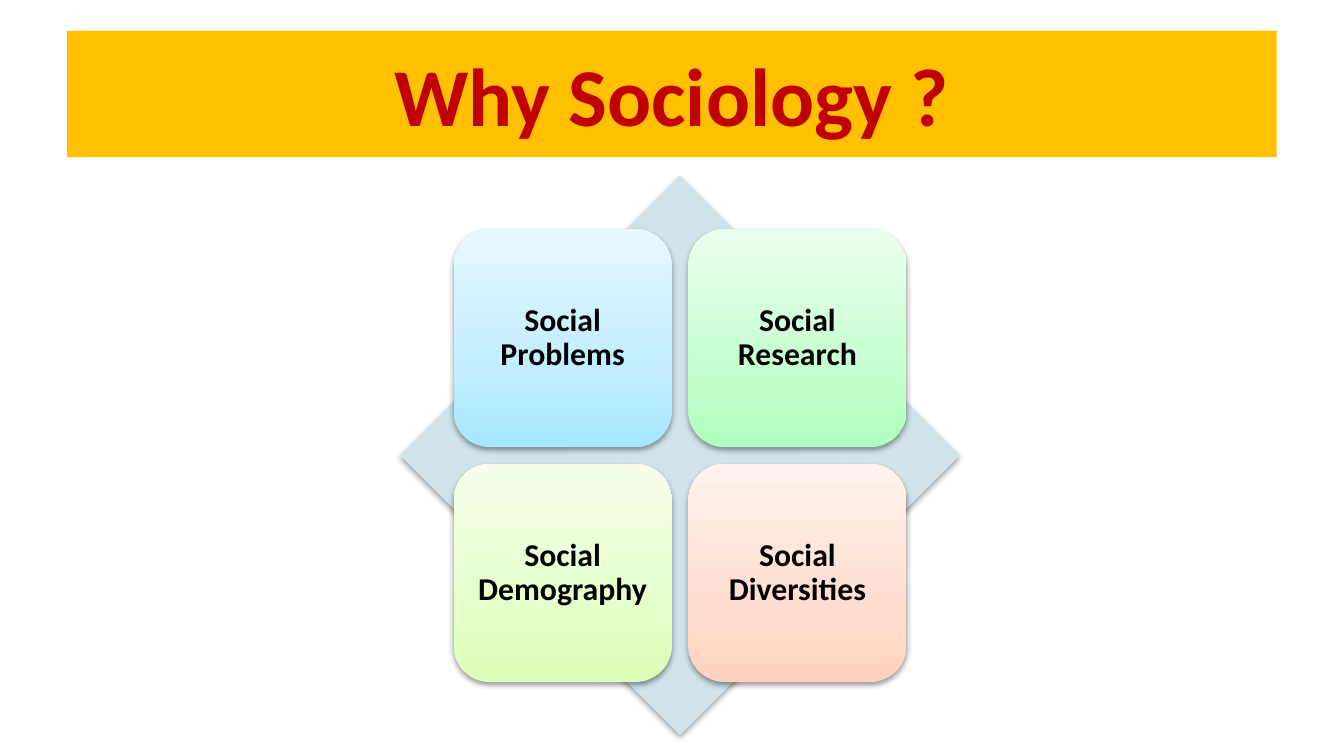
"""Build the "Why Sociology ?" slide: a title bar over a four-part matrix."""
from copy import deepcopy

from lxml.etree import SubElement
from pptx import Presentation
from pptx.dml.color import RGBColor
from pptx.enum.shapes import MSO_SHAPE
from pptx.enum.text import MSO_ANCHOR, PP_ALIGN
from pptx.oxml.ns import qn
from pptx.util import Inches, Pt

TITLE = "Why Sociology ?"
TOPICS = [
    ("Social Problems", ("A7E6FF", "C1EDFF", "E7F8FF")),
    ("Social Research", ("AFFFBD", "C6FFD0", "E9FFED")),
    ("Social Demography", ("DBFFB6", "E5FFCB", "F5FFEB")),
    ("Social Diversities", ("FFD2BD", "FFDED0", "FFF2ED")),
]
COLORS = {"bar": "FFC000", "title": "C00000", "diamond": "D0E3EA",
          "text": "000000", "shadow": "000000"}
STOPS = (0, 0.35, 1)
FONT = "Calibri"
DIAMOND_LEFT, DIAMOND_TOP, DIAMOND_SIZE = 2.98, 1.31, 4.16
TILE_SHARE, STEP_SHARE = 0.39, 0.42
COLUMNS = 2


def add_box(page, kind, left, top, width, height):
    box = page.shapes.add_shape(kind, Inches(left), Inches(top),
                                Inches(width), Inches(height))
    box.shadow.inherit = False
    box.line.fill.background()
    return box


def fill_solid(box, color):
    box.fill.solid()
    box.fill.fore_color.rgb = RGBColor.from_string(color)


def fill_gradient(box, colors):
    box.fill.gradient()
    box.fill.gradient_angle = 90
    stop_list = box.element.spPr.find(".//" + qn("a:gsLst"))
    stop_list.append(deepcopy(stop_list[0]))
    for stop, position, color in zip(box.fill.gradient_stops, STOPS, colors):
        stop.position = position
        stop.color.rgb = RGBColor.from_string(color)


def add_shadow(box):
    effects = box.element.spPr.find(qn("a:effectLst"))
    shadow = SubElement(effects, qn("a:outerShdw"), blurRad=str(Pt(3.1)),
                        dist=str(Pt(1.6)), dir="5400000", rotWithShape="0")
    color = SubElement(shadow, qn("a:srgbClr"), val=COLORS["shadow"])
    SubElement(color, qn("a:alpha"), val="38000")


def write_text(box, text, *, size, color, inset, spacing=1.0):
    frame = box.text_frame
    frame.word_wrap = True
    frame.vertical_anchor = MSO_ANCHOR.MIDDLE
    frame.margin_left = frame.margin_right = Inches(inset)
    frame.margin_top = frame.margin_bottom = Inches(inset)
    para = frame.paragraphs[0]
    para.alignment = PP_ALIGN.CENTER
    para.line_spacing = spacing
    span = para.add_run()
    span.text = text
    span.font.name = FONT
    span.font.size = Pt(size)
    span.font.bold = True
    span.font.color.rgb = RGBColor.from_string(color)


def main():
    deck = Presentation()
    deck.slide_width = Inches(10)
    deck.slide_height = deck.slide_width * 9 // 16
    page = deck.slides.add_slide(deck.slide_layouts[6])

    bar = add_box(page, MSO_SHAPE.RECTANGLE, 0.5, 0.23, 9, 0.94)
    fill_solid(bar, COLORS["bar"])
    write_text(bar, TITLE, size=44, color=COLORS["title"], inset=0.05)

    diamond = add_box(page, MSO_SHAPE.DIAMOND, DIAMOND_LEFT, DIAMOND_TOP,
                      DIAMOND_SIZE, DIAMOND_SIZE)
    fill_solid(diamond, COLORS["diamond"])
    add_shadow(diamond)

    tile_size = DIAMOND_SIZE * TILE_SHARE
    step = DIAMOND_SIZE * STEP_SHARE
    margin = (DIAMOND_SIZE - step - tile_size) / 2
    for index, (topic, colors) in enumerate(TOPICS):
        row, column = divmod(index, COLUMNS)
        tile = add_box(page, MSO_SHAPE.ROUNDED_RECTANGLE,
                       DIAMOND_LEFT + margin + column * step,
                       DIAMOND_TOP + margin + row * step, tile_size, tile_size)
        fill_gradient(tile, colors)
        add_shadow(tile)
        write_text(tile, topic, size=17, color=COLORS["text"], inset=0.07,
                   spacing=0.9)

    deck.save("out.pptx")


if __name__ == "__main__":
    main()
